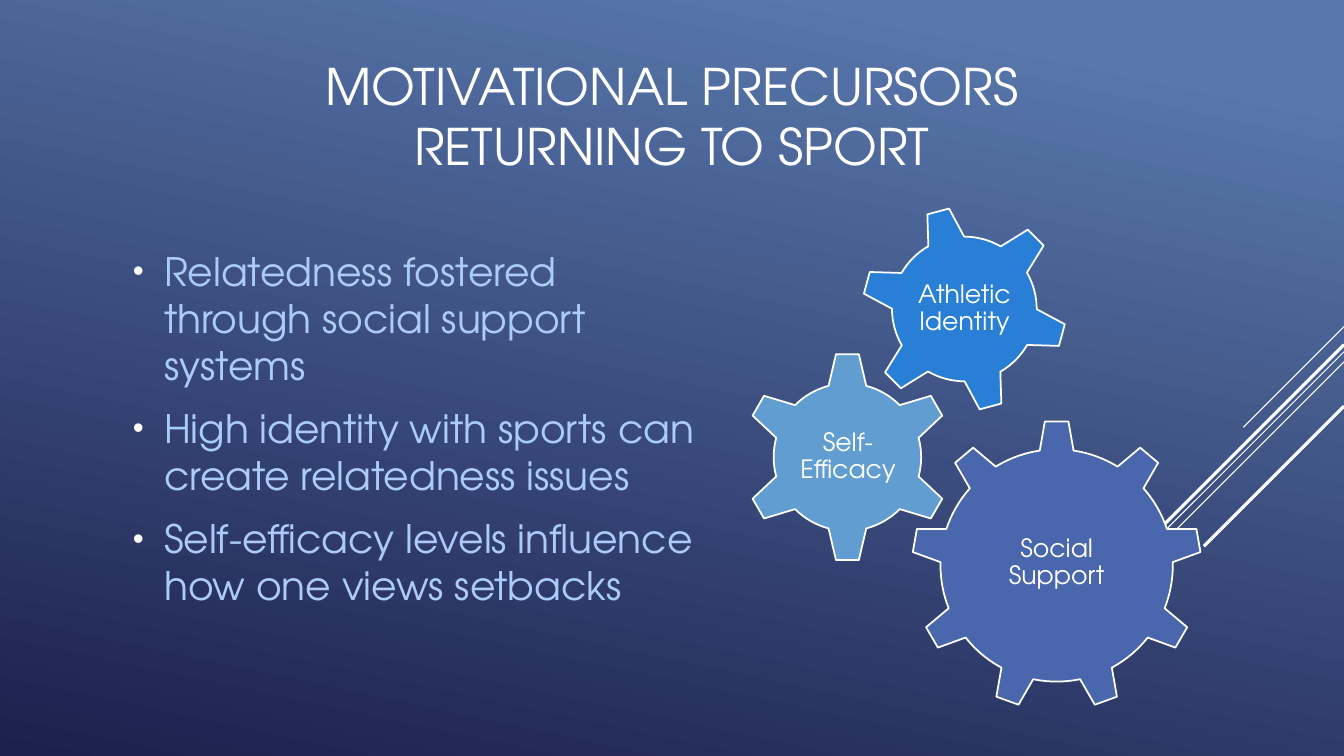
from lxml import etree
from pptx import Presentation
from pptx.dml.color import RGBColor
from pptx.enum import shapes, text
from pptx.oxml.ns import qn
from pptx.util import Inches, Pt

FONT = "TeX Gyre Adventor"
COLORS = {"white": "FFFFFF", "body": "ACCBF9", "bg_top": "5877AB", "bg_bottom": "1C204D",
          "indigo": "4A66AC", "sky": "629DD1", "blue": "297FD5"}
TITLE = "MOTIVATIONAL PRECURSORS RETURNING TO SPORT"
BULLETS = [
    "Relatedness fostered through social support systems",
    "High identity with sports can create relatedness issues",
    "Self-efficacy levels influence how one views setbacks",
]
# y at the right edge, horizontal and vertical run, line width
RAYS = [(3.24, 1.0, 0.75), (3.49, 3.26, 0.75), (3.59, 2.07, 0.75),
        (3.42, 1.91, 2.25), (4.03, 1.39, 2.25)]
# label, preset, left, top, size, rotation, colour, label box
GEARS = [
    ("Social Support", "GEAR_9", 9.04, 4.17, 2.88, 0, "indigo", (9.62, 4.84, 1.72, 1.48)),
    ("Self-Efficacy", "GEAR_6", 7.36, 3.49, 2.09, 0, "sky", (7.89, 4.02, 1.04, 1.03)),
    ("Athletic Identity", "GEAR_6", 8.54, 2.04, 2.05, 345, "blue", (8.99, 2.49, 1.15, 1.15)),
]
WIDTH, HEIGHT = 13.33, 7.5


def rgb(name):
    return RGBColor.from_string(COLORS[name])


def add_text(s, box, lines, size, color, align, anchor, inset=None):
    tf = s.shapes.add_textbox(*map(Inches, box)).text_frame
    tf.word_wrap = True
    tf.vertical_anchor = anchor
    if inset is not None:
        tf.margin_left = tf.margin_right = tf.margin_top = tf.margin_bottom = Inches(inset)
    for i, line in enumerate(lines):
        p = tf.add_paragraph() if i else tf.paragraphs[0]
        p.text = line
        p.alignment = align
        p.font.name = FONT
        p.font.size = Pt(size)
        p.font.color.rgb = rgb(color)
    return tf.paragraphs


def add_bullet(p):
    pPr = p._p.get_or_add_pPr()
    pPr.set("marL", str(Inches(0.31)))
    pPr.set("indent", str(Inches(-0.31)))
    p.space_before = Pt(5.6)
    p.space_after = Pt(6)
    marks = [etree.Element(qn(tag)) for tag in ("a:buClr", "a:buSzPct", "a:buFont", "a:buChar")]
    etree.SubElement(marks[0], qn("a:srgbClr")).set("val", COLORS["white"])
    marks[1].set("val", "80000")
    marks[2].set("typeface", "Arial")
    marks[3].set("char", "•")
    defaults = pPr.find(qn("a:defRPr"))
    for mark in marks:
        defaults.addprevious(mark)


def add_ray(s, y, run, width):
    """Draw a 45° line down and left from the right edge."""
    ray = s.shapes.add_connector(shapes.MSO_CONNECTOR.STRAIGHT, Inches(WIDTH), Inches(y),
                                 Inches(WIDTH - run), Inches(y + run))
    ray.line.color.rgb = rgb("white")
    ray.line.width = Pt(width)
    etree.SubElement(ray._element.spPr, qn("a:effectLst"))


def add_gear(s, label, preset, left, top, size, rotation, color, label_box):
    sp = s.shapes.add_shape(shapes.MSO_SHAPE[preset], Inches(left), Inches(top),
                            Inches(size), Inches(size))
    sp.rotation = rotation
    sp.shadow.inherit = False
    sp.fill.solid()
    sp.fill.fore_color.rgb = rgb(color)
    sp.line.color.rgb = rgb("white")
    sp.line.width = Pt(1.25)
    p, = add_text(s, label_box, [label], 18, "white", text.PP_ALIGN.CENTER,
                  text.MSO_ANCHOR.MIDDLE, 0.03)
    p.line_spacing = 0.9


def main():
    prs = Presentation()
    prs.slide_width, prs.slide_height = Inches(WIDTH), Inches(HEIGHT)
    s = prs.slides.add_slide(prs.slide_layouts[6])

    fill = s.background.fill
    fill.gradient()
    fill.gradient_angle = 258
    stops = [(0.1, "bg_top"), (1, "bg_bottom")]
    for stop, (position, color) in zip(fill.gradient_stops, stops):
        stop.position = position
        stop.color.rgb = rgb(color)

    for ray in RAYS:
        add_ray(s, *ray)
    add_text(s, (2, 0.32, 9.33, 1.65), [TITLE], 36, "white",
             text.PP_ALIGN.CENTER, text.MSO_ANCHOR.MIDDLE)
    for p in add_text(s, (1.22, 2.4, 5.81, 4.5), BULLETS, 28, "body",
                      text.PP_ALIGN.LEFT, text.MSO_ANCHOR.TOP):
        add_bullet(p)
    for gear in GEARS:
        add_gear(s, *gear)
    prs.save("out.pptx")


if __name__ == "__main__":
    main()
